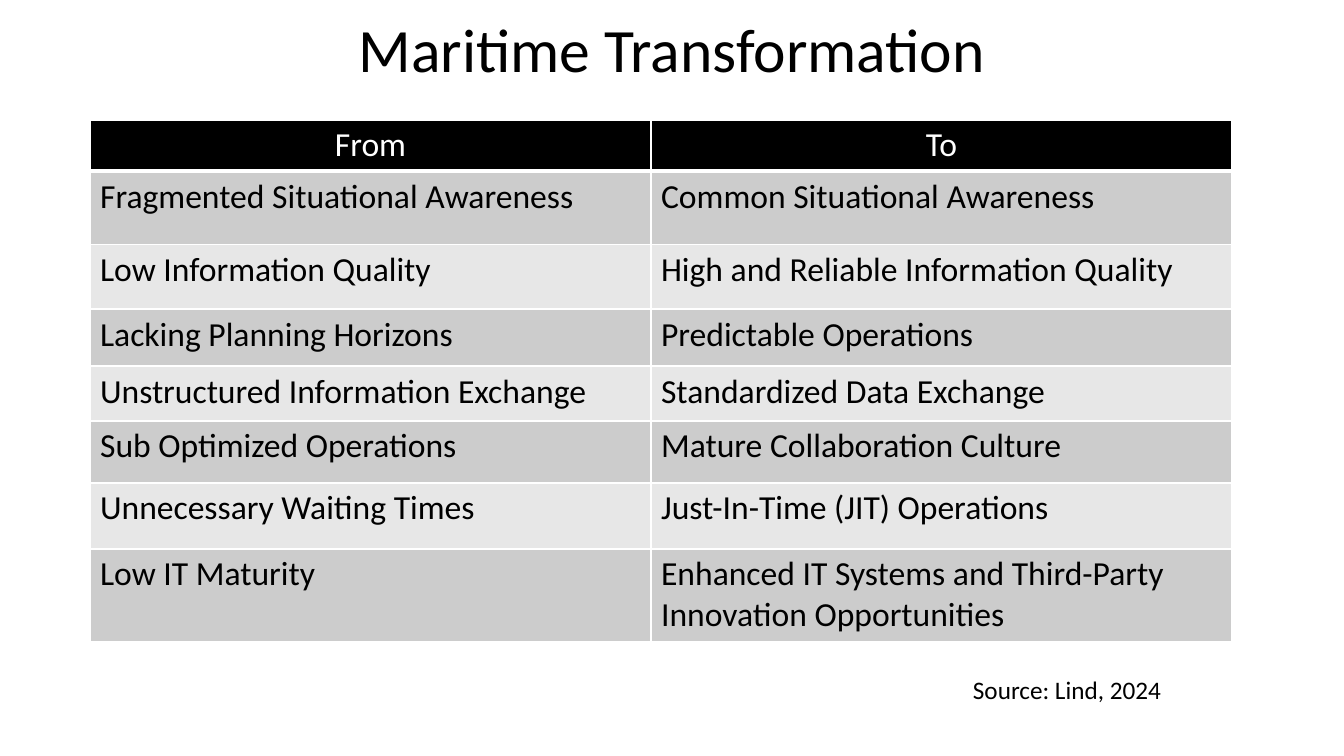
from lxml import etree
from pptx import Presentation
from pptx.dml.color import RGBColor
from pptx.enum.shapes import MSO_SHAPE
from pptx.enum.text import MSO_ANCHOR, PP_ALIGN
from pptx.oxml.ns import qn
from pptx.util import Emu, Pt

PX = 914400 / 100.8
RECT = MSO_SHAPE.RECTANGLE
MIDDLE = MSO_ANCHOR.MIDDLE
LEFT, CENTER = PP_ALIGN.LEFT, PP_ALIGN.CENTER

BLACK = RGBColor(0x00, 0x00, 0x00)
WHITE = RGBColor(0xFF, 0xFF, 0xFF)
DARK_BAND = RGBColor(0xCC, 0xCC, 0xCC)
LIGHT_BAND = RGBColor(0xE7, 0xE7, 0xE7)

COLUMNS = [561, 581]
HEIGHTS = [49, 73, 65, 57, 55, 62, 66, 87]
ROWS = [
    ("From", "To"),
    ("Fragmented Situational Awareness", "Common Situational Awareness"),
    ("Low Information Quality", "High and Reliable Information Quality"),
    ("Lacking Planning Horizons", "Predictable Operations"),
    ("Unstructured Information Exchange", "Standardized Data Exchange"),
    ("Sub Optimized Operations", "Mature Collaboration Culture"),
    ("Unnecessary Waiting Times", "Just-In-Time (JIT) Operations"),
    ("Low IT Maturity",
     "Enhanced IT Systems and Third-Party Innovation Opportunities"),
]


def px(n):
    return Emu(round(n * PX))


class Slide:
    font = "Calibri"

    def __init__(self, prs):
        self.s = prs.slides.add_slide(prs.slide_layouts[6])

    def add_text(self, tf, text, size, color=BLACK, align=CENTER):
        p = tf.paragraphs[0]
        p.alignment = align
        r = p.add_run()
        r.text = text
        r.font.name = self.font
        r.font.size = Pt(size)
        r.font.color.rgb = color

    def banner(self, box, text, size):
        sp = self.s.shapes.add_shape(RECT, *map(px, box))
        sp.shadow.inherit = False
        sp.fill.solid()
        sp.fill.fore_color.rgb = WHITE
        sp.line.fill.background()
        sp.text_frame.word_wrap = True
        sp.text_frame.vertical_anchor = MIDDLE
        self.add_text(sp.text_frame, text, size)

    def label(self, box, text, size):
        tf = self.s.shapes.add_textbox(*map(px, box)).text_frame
        tf.word_wrap = True
        tf.vertical_anchor = MIDDLE
        self.add_text(tf, text, size)

    def borders(self, cell, bottom):
        tc_pr = cell._tc.get_or_add_tcPr()
        for side, width in zip("LRTB", (1, 1, 1, bottom)):
            ln = etree.SubElement(tc_pr, qn(f"a:ln{side}"), w=str(Pt(width)))
            fill = etree.SubElement(ln, qn("a:solidFill"))
            etree.SubElement(fill, qn("a:srgbClr"), val=str(WHITE))

    def table(self, x, y, columns, heights, rows, size):
        frame = self.s.shapes.add_table(len(rows), len(columns), px(x), px(y),
                                        px(sum(columns)), px(sum(heights)))
        table = frame.table
        for column, width in zip(table.columns, columns):
            column.width = px(width)
        for i, texts in enumerate(rows):
            table.rows[i].height = px(heights[i])
            header = i == 0
            band = DARK_BAND if i % 2 else LIGHT_BAND
            for j, text in enumerate(texts):
                cell = table.cell(i, j)
                self.borders(cell, 3 if header else 1)
                cell.fill.solid()
                cell.fill.fore_color.rgb = BLACK if header else band
                self.add_text(cell.text_frame, text, size,
                              WHITE if header else BLACK,
                              CENTER if header else LEFT)


def main():
    prs = Presentation()
    prs.slide_width, prs.slide_height = px(1344), px(756)
    slide = Slide(prs)

    # Title
    slide.banner((0, 0, 1344, 96), "Maritime Transformation", 44)

    # From/To comparison
    slide.table(90, 120, COLUMNS, HEIGHTS, ROWS, 24)

    # Source line
    slide.label((869, 663, 396, 52), "Source: Lind, 2024", 18)

    prs.save("out.pptx")


if __name__ == "__main__":
    main()
